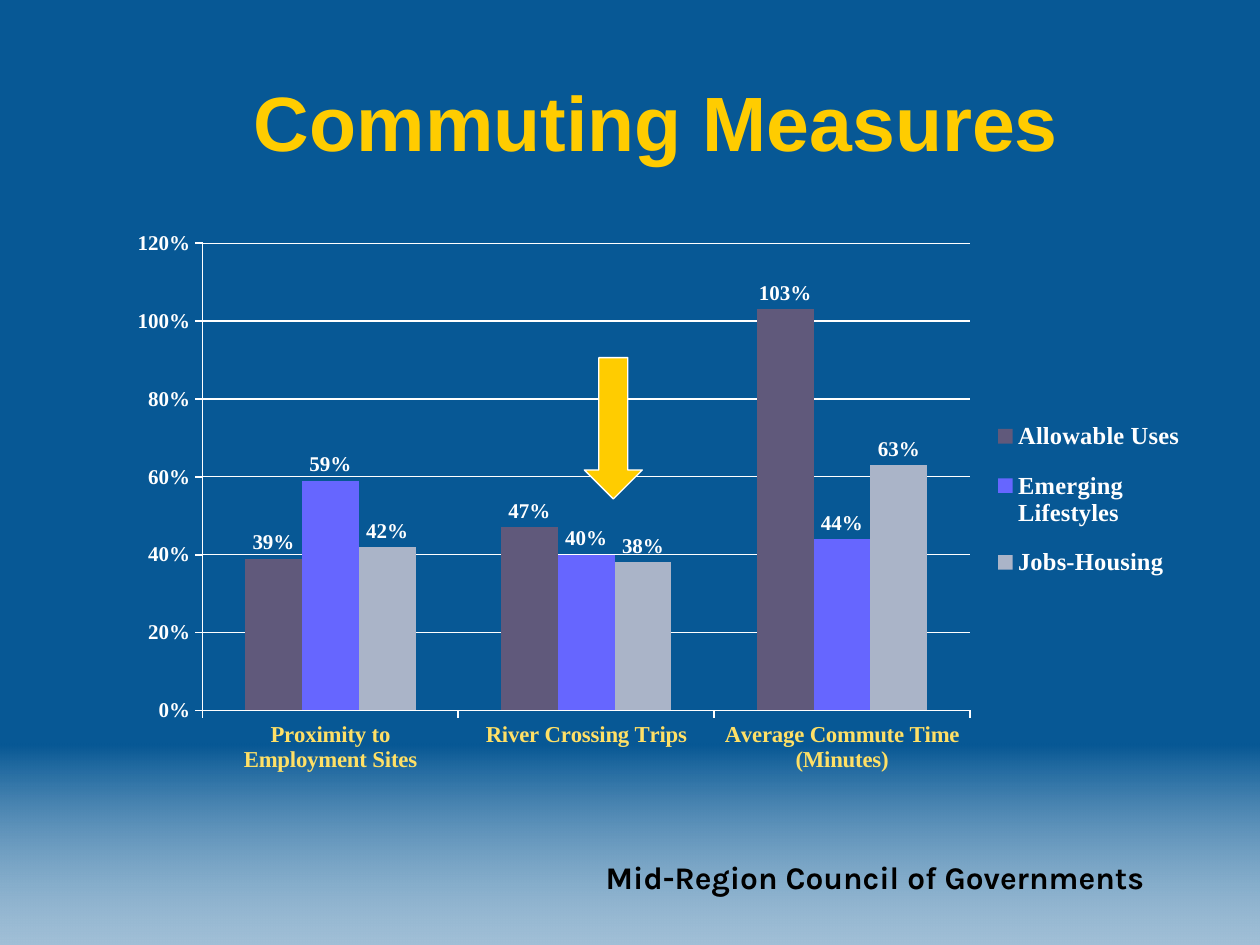
from dataclasses import dataclass

from lxml import etree
from pptx import Presentation
from pptx.chart import data as cd
from pptx.dml.color import RGBColor
from pptx.enum import chart as ch, shapes, text
from pptx.oxml import ns
from pptx.util import Cm, Pt


@dataclass(frozen=True)
class Theme:
    blue: str = "075895"
    white: str = "FFFFFF"
    black: str = "000000"
    gold: str = "FFCC00"
    category: str = "FFE066"
    series: tuple = ("60597B", "6666FF", "AAB4C8")
    title_font: str = "Arial"
    footer_font: str = "Karla"
    chart_font: str = "Times New Roman"
    title_pt: int = 44
    footer_pt: int = 18
    legend_pt: int = 14
    category_pt: int = 13
    value_pt: int = 12


THEME = Theme()
CATEGORIES = ["Proximity to Employment Sites", "River Crossing Trips",
              "Average Commute Time (Minutes)"]
SERIES = {
    "Allowable Uses": (0.39, 0.47, 1.03),
    "Emerging Lifestyles": (0.59, 0.40, 0.44),
    "Jobs-Housing": (0.42, 0.38, 0.63),
}


def rgb(color):
    return RGBColor.from_string(color)


def set_font(font, name, size, color):
    font.name, font.size, font.bold = name, Pt(size), True
    font.color.rgb = rgb(color)


def add_fade(s):
    """Band at the foot of the slide, from blue to translucent white."""
    sp = s.shapes.add_shape(shapes.MSO_SHAPE.RECTANGLE,
                            Cm(0), Cm(14.99), Cm(25.4), Cm(4.06))
    sp.shadow.inherit = False
    sp.line.fill.background()
    sp.fill.gradient()
    sp.fill.gradient_angle = 270
    for stop, position, color in zip(sp.fill.gradient_stops, (0, 1), (THEME.blue, THEME.white)):
        stop.position = position
        stop.color.rgb = rgb(color)
    end_color = sp.fill._fill._gradFill.findall(".//" + ns.qn("a:srgbClr"))[-1]
    etree.SubElement(end_color, ns.qn("a:alpha"), val="62000")


def add_text(s, box, content, font, size, color, align, wrap):
    tf = s.shapes.add_textbox(*map(Cm, box)).text_frame
    tf.word_wrap = wrap
    tf.vertical_anchor = text.MSO_ANCHOR.MIDDLE if wrap else text.MSO_ANCHOR.TOP
    p = tf.paragraphs[0]
    p.alignment = align
    r = p.add_run()
    r.text = content
    set_font(r.font, font, size, color)


def set_layout(parent, x, y, w, h, inner=False):
    """Place a plot area or legend by fractions of the chart's size."""
    for old in parent.findall(ns.qn("c:layout")):
        parent.remove(old)
    layout = etree.Element(ns.qn("c:layout"))
    manual = etree.SubElement(layout, ns.qn("c:manualLayout"))
    settings = [("layoutTarget", "inner")] if inner else []
    settings += [("xMode", "edge"), ("yMode", "edge"),
                 ("x", x), ("y", y), ("w", w), ("h", h)]
    for tag, value in settings:
        etree.SubElement(manual, ns.qn("c:" + tag), val=str(value))
    position = parent.find(ns.qn("c:legendPos"))
    if position is None:
        parent.insert(0, layout)
    else:
        position.addnext(layout)


def style_line(line, width=1):
    line.color.rgb = rgb(THEME.white)
    line.width = Pt(width)


def style_axis(axis, size, color):
    axis.major_tick_mark = ch.XL_TICK_MARK.OUTSIDE
    axis.minor_tick_mark = ch.XL_TICK_MARK.NONE
    style_line(axis.format.line)
    set_font(axis.tick_labels.font, THEME.chart_font, size, color)


def style_series(series, color):
    series.format.fill.solid()
    series.format.fill.fore_color.rgb = rgb(color)
    series.invert_if_negative = False
    labels = series.data_labels
    labels.show_value = True
    labels.number_format, labels.number_format_is_linked = "0%", False
    labels.position = ch.XL_LABEL_POSITION.OUTSIDE_END
    set_font(labels.font, THEME.chart_font, THEME.value_pt, THEME.white)


def add_measures_chart(s):
    data = cd.CategoryChartData(number_format="0%")
    data.categories = CATEGORIES
    for name, values in SERIES.items():
        data.add_series(name, values)
    chart = s.shapes.add_chart(ch.XL_CHART_TYPE.COLUMN_CLUSTERED, Cm(2.34), Cm(4.45),
                               Cm(21.79), Cm(11.35), data).chart
    chart.has_title = False
    chart.font.name = THEME.chart_font

    plot = chart.plots[0]
    plot.gap_width, plot.overlap, plot.vary_by_categories = 150, 0, False
    for series, color in zip(plot.series, THEME.series):
        style_series(series, color)

    style_axis(chart.category_axis, THEME.category_pt, THEME.category)
    axis = chart.value_axis
    style_axis(axis, THEME.value_pt, THEME.white)
    axis.minimum_scale, axis.maximum_scale, axis.major_unit = 0, 1.2, 0.2
    axis.tick_labels.number_format = "0%"
    axis.tick_labels.number_format_is_linked = False
    style_line(axis.major_gridlines.format.line, 0.75)

    chart.has_legend = True
    legend = chart.legend
    legend.position = ch.XL_LEGEND_POSITION.RIGHT
    legend.include_in_layout = False
    set_font(legend.font, THEME.chart_font, THEME.legend_pt, THEME.white)
    set_layout(legend._element, 0.81, 0.32, 0.18, 0.35)
    set_layout(chart._chartSpace.chart.plotArea, 0.08, 0.04, 0.71, 0.83, inner=True)


def add_arrow(s):
    sp = s.shapes.add_shape(shapes.MSO_SHAPE.DOWN_ARROW,
                            Cm(11.78), Cm(7.21), Cm(1.17), Cm(2.85))
    sp.shadow.inherit = False
    sp.fill.solid()
    sp.fill.fore_color.rgb = rgb(THEME.gold)
    style_line(sp.line, 0.75)


def main():
    prs = Presentation()
    prs.slide_width, prs.slide_height = Cm(25.4), Cm(19.05)
    s = prs.slides.add_slide(prs.slide_layouts[6])
    s.background.fill.solid()
    s.background.fill.fore_color.rgb = rgb(THEME.blue)
    add_fade(s)
    add_text(s, (11.96, 17.17, 11.99, 1.02), "Mid-Region Council of Governments",
             THEME.footer_font, THEME.footer_pt, THEME.black, text.PP_ALIGN.LEFT, wrap=False)
    add_text(s, (2.34, 0.84, 21.79, 3.18), "Commuting Measures",
             THEME.title_font, THEME.title_pt, THEME.gold, text.PP_ALIGN.CENTER, wrap=True)
    add_measures_chart(s)
    add_arrow(s)
    prs.save("out.pptx")


if __name__ == "__main__":
    main()
